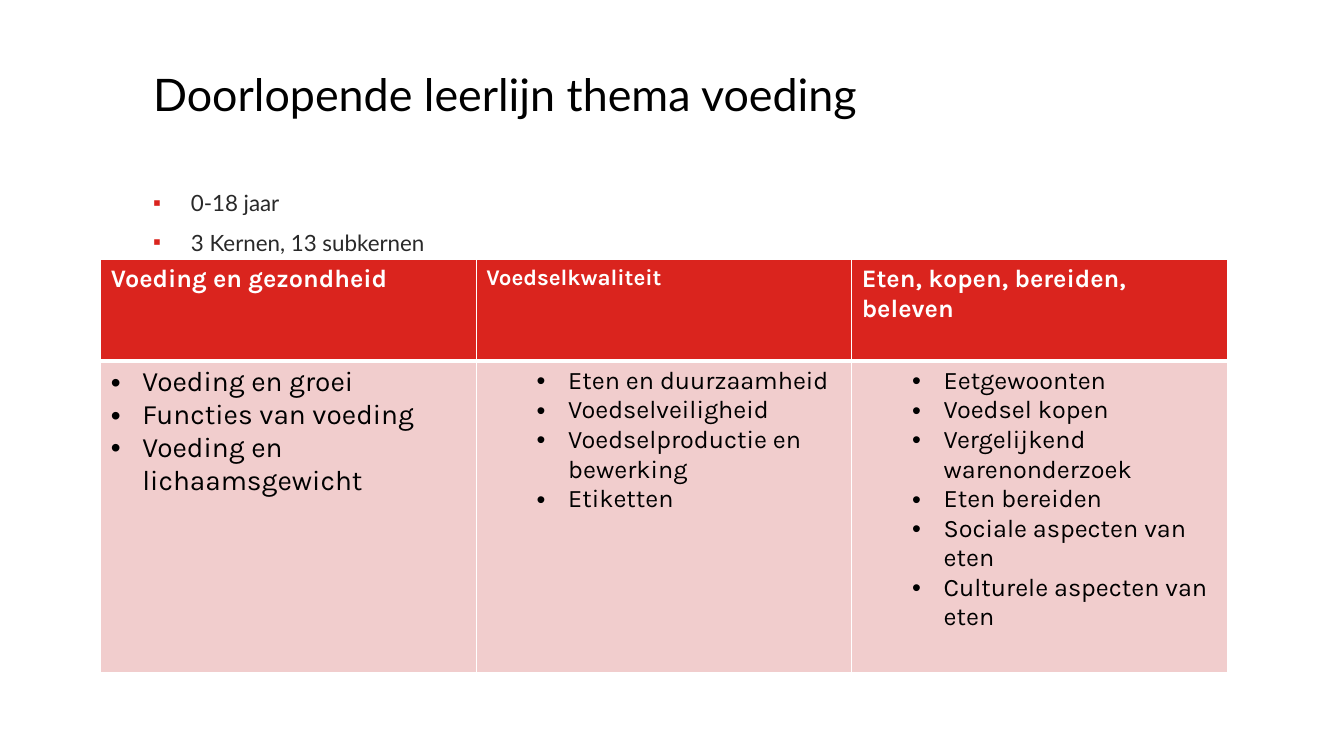
"""Build the slide on the continuous learning line for the food theme."""
from dataclasses import dataclass

import lxml.etree
import pptx
import pptx.dml.color
import pptx.enum.text
import pptx.oxml.ns
import pptx.util

Pt = pptx.util.Pt
Color = pptx.dml.color.RGBColor


@dataclass(frozen=True)
class Theme:
    """Colours, fonts and type sizes of the slide."""

    red: str = "DA241E"
    pink: str = "F1CDCD"
    white: str = "FFFFFF"
    black: str = "000000"
    grey: str = "292929"
    heading_font: str = "Lato"
    table_font: str = "Karla"
    title_size: float = 32
    large_size: float = 20
    medium_size: float = 18
    small_size: float = 16
    thin_line: float = 1
    thick_line: float = 3


@dataclass(frozen=True)
class Style:
    """Character and bullet format of a paragraph."""

    font: str
    size: float
    color: str
    bold: bool = False
    bullet: str = ""
    bullet_color: str = ""
    margin: float = 0
    hanging: float = 0
    level: int = 0
    line_spacing: float = 1
    gap: float = 0


@dataclass(frozen=True)
class Column:
    """One core with its subcores."""

    heading: str
    heading_size: float
    topics: tuple[str, ...]
    topic_size: float
    margin: float
    level: int


@dataclass(frozen=True)
class Area:
    """A text box in points."""

    left: float
    top: float
    width: float
    height: float
    lines: tuple[str, ...]
    style: Style
    anchor: pptx.enum.text.MSO_ANCHOR


THEME = Theme()
AREAS = (
    Area(102.24, 21.6, 810, 90, ("Doorlopende leerlijn thema voeding",),
         Style(THEME.heading_font, THEME.title_size, THEME.black),
         pptx.enum.text.MSO_ANCHOR.MIDDLE),
    Area(102.24, 126, 810, 324.7, ("0-18 jaar", "3 Kernen, 13 subkernen"),
         Style(THEME.heading_font, THEME.small_size, THEME.grey, bullet="▪",
               bullet_color=THEME.red, margin=27, hanging=27,
               line_spacing=1.3, gap=3.2),
         pptx.enum.text.MSO_ANCHOR.TOP),
)
COLUMNS = (
    Column("Voeding en gezondheid", THEME.medium_size,
           ("Voeding en groei", "Functies van voeding",
            "Voeding en lichaamsgewicht"), THEME.large_size, 22.5, 0),
    Column("Voedselkwaliteit", THEME.small_size,
           ("Eten en duurzaamheid", "Voedselveiligheid",
            "Voedselproductie en bewerking", "Etiketten"),
           THEME.medium_size, 58.5, 1),
    Column("Eten, kopen, bereiden, beleven", THEME.medium_size,
           ("Eetgewoonten", "Voedsel kopen", "Vergelijkend warenonderzoek",
            "Eten bereiden", "Sociale aspecten van eten",
            "Culturele aspecten van eten"), THEME.medium_size, 58.5, 1),
)
TABLE_LEFT, TABLE_TOP = 72, 185.4
COLUMN_WIDTH = 268.2
ROW_HEIGHTS = (72.6, 222.4)


def add_element(parent, tag: str, **attributes: str):
    """Append a drawing element to its parent."""
    return lxml.etree.SubElement(parent, pptx.oxml.ns.qn(tag), attributes)


def add_bullet(para, style: Style) -> None:
    """Give a paragraph its hanging bullet."""
    properties = para._p.get_or_add_pPr()
    properties.set("marL", str(Pt(style.margin)))
    properties.set("indent", str(-Pt(style.hanging)))
    if style.bullet_color:
        color = add_element(properties, "a:buClr")
        add_element(color, "a:srgbClr", val=style.bullet_color)
    add_element(properties, "a:buFont", typeface="Arial")
    add_element(properties, "a:buChar", char=style.bullet)


def write_lines(frame, lines: tuple[str, ...], style: Style) -> None:
    """Write one paragraph per line in the given style."""
    formats = {"name": style.font, "size": Pt(style.size), "bold": style.bold}
    for index, line in enumerate(lines):
        para = frame.add_paragraph() if index else frame.paragraphs[0]
        if style.bullet:
            add_bullet(para, style)
        spacing = {"level": style.level, "line_spacing": style.line_spacing,
                   "space_before": Pt(style.gap if index else 0)}
        for name, value in spacing.items():
            setattr(para, name, value)
        span = para.add_run()
        span.text = line
        for name, value in formats.items():
            setattr(span.font, name, value)
        span.font.color.rgb = Color.from_string(style.color)


def add_area(page, area: Area) -> None:
    """Draw a text box."""
    box = page.shapes.add_textbox(
        Pt(area.left), Pt(area.top), Pt(area.width), Pt(area.height))
    box.text_frame.word_wrap = True
    box.text_frame.vertical_anchor = area.anchor
    write_lines(box.text_frame, area.lines, area.style)


def fill_cell(cell, lines: tuple[str, ...], style: Style, fill: str,
              thick_side: str) -> None:
    """Set the borders, fill and text of a cell."""
    properties = cell._tc.get_or_add_tcPr()
    for side in "LRTB":
        width = THEME.thick_line if side == thick_side else THEME.thin_line
        line = add_element(properties, f"a:ln{side}", w=str(Pt(width)))
        add_element(add_element(line, "a:solidFill"), "a:srgbClr",
                    val=THEME.white)
    cell.fill.solid()
    cell.fill.fore_color.rgb = Color.from_string(fill)
    write_lines(cell.text_frame, lines, style)


def add_core_table(page, columns: tuple[Column, ...]) -> None:
    """Draw the table of cores and subcores."""
    table = page.shapes.add_table(
        len(ROW_HEIGHTS), len(columns), Pt(TABLE_LEFT), Pt(TABLE_TOP),
        Pt(COLUMN_WIDTH * len(columns)), Pt(sum(ROW_HEIGHTS))).table
    for row, height in zip(table.rows, ROW_HEIGHTS):
        row.height = Pt(height)
    for index, column in enumerate(columns):
        table.columns[index].width = Pt(COLUMN_WIDTH)
        heading = Style(THEME.table_font, column.heading_size, THEME.white,
                        bold=True)
        topic = Style(THEME.table_font, column.topic_size, THEME.black,
                      bullet="•", margin=column.margin, hanging=22.5,
                      level=column.level)
        fill_cell(table.cell(0, index), (column.heading,), heading,
                  THEME.red, "B")
        fill_cell(table.cell(1, index), column.topics, topic,
                  THEME.pink, "T")


def main() -> None:
    """Build and save the deck."""
    deck = pptx.Presentation()
    deck.slide_width, deck.slide_height = Pt(960), Pt(540)
    page = deck.slides.add_slide(deck.slide_layouts[6])
    for area in AREAS:
        add_area(page, area)
    add_core_table(page, COLUMNS)
    deck.save("out.pptx")


if __name__ == "__main__":
    main()
